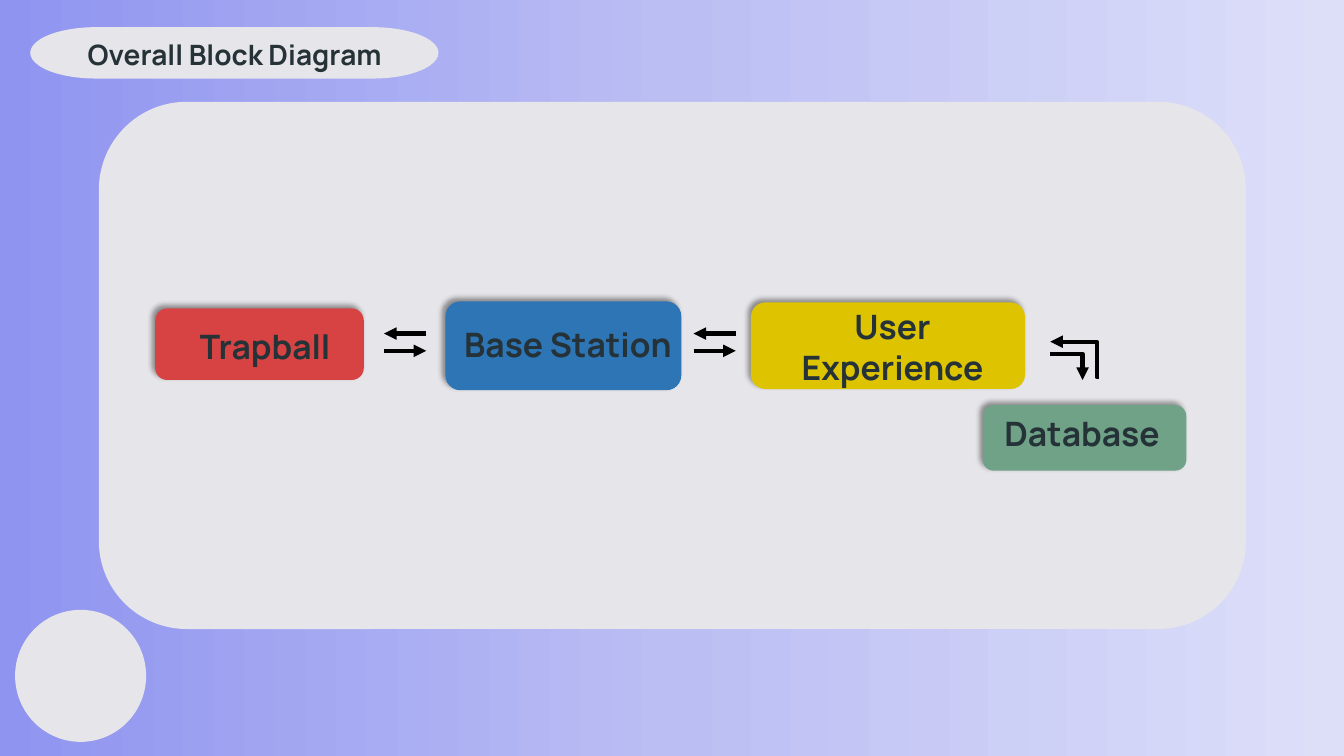
import copy
import pptx
import pptx.util
import pptx.dml.color
import pptx.enum.shapes
import pptx.enum.text
import pptx.oxml
import pptx.oxml.ns

Pt = pptx.util.Pt
RGB = pptx.dml.color.RGBColor
SHAPE = pptx.enum.shapes.MSO_SHAPE
CONNECTOR = pptx.enum.shapes.MSO_CONNECTOR
qn = pptx.oxml.ns.qn

PANEL = RGB(0xE6, 0xE6, 0xEA)
INK = RGB(0x25, 0x32, 0x37)
BLACK = RGB(0, 0, 0)
RED = RGB(0xD7, 0x43, 0x43)
GREEN = RGB(0x70, 0xA2, 0x88)
YELLOW = RGB(0xDE, 0xC4, 0x00)
BLUE = RGB(0x2E, 0x75, 0xB6)
BACKDROP = [(0, RGB(0x8F, 0x94, 0xF0)), (0.5, RGB(0xBB, 0xBE, 0xF3)), (1, RGB(0xDD, 0xDF, 0xF9))]

# Content: left, top, width, height in points
TITLE = ("Overall Block Diagram", (51.8, 23, 231.8, 31.7))
CARD = (70.6, 72.7, 819.4, 376.6)
PILL = (21.6, 19.4, 291.6, 36.7)
DISC = (10.8, 435.6, 93.6, 94.3)
BLOCKS = [  # label, colour, block box, label box
    ("Trapball", RED, (110.9, 220.3, 149, 51.1), (118.1, 229, 142.6, 36)),
    ("Database", GREEN, (702, 289.4, 145.4, 46.8), (698.4, 291.6, 149, 36)),
    ("User Experience", YELLOW, (536.4, 216, 195.8, 61.9), (545, 215.3, 185, 65.5)),
    ("Base Station", BLUE, (318.2, 215.3, 168.5, 63.4), (313.2, 227.5, 185, 36)),
]
EXCHANGE_LEFTS = [274.3, 495.4]
EXCHANGE_WIDTH, BACK_Y, FORTH_Y = 30.2, 238.3, 250.6
BENDS = [  # ends, bend position, rotation
    ((750.2, 252.7, 773.3, 271.4), 100000, 0),
    ((750.2, 244.1, 784.8, 269.3), 4400, 180),
]

deck = pptx.Presentation()
deck.slide_width, deck.slide_height = Pt(960), Pt(540)
slide = deck.slides.add_slide(deck.slide_layouts[5])


def add_panel(kind, box, color):
    panel = slide.shapes.add_shape(kind, *map(Pt, box))
    panel.shadow.inherit = False
    panel.fill.solid()
    panel.fill.fore_color.rgb = color
    panel.line.fill.background()
    return panel


def write_label(holder, text, size):
    frame = holder.text_frame
    frame.text = text
    frame_format = {
        "word_wrap": True,
        "auto_size": pptx.enum.text.MSO_AUTO_SIZE.NONE,
        "vertical_anchor": pptx.enum.text.MSO_ANCHOR.TOP,
        "margin_left": Pt(7.2), "margin_right": Pt(7.2),
        "margin_top": Pt(3.6), "margin_bottom": Pt(3.6),
    }
    line = frame.paragraphs[0]
    line_format = {"alignment": pptx.enum.text.PP_ALIGN.CENTER,
                   "line_spacing": 1.0, "space_before": Pt(0)}
    font_format = {"name": "Manrope", "size": Pt(size), "bold": True}
    for target, values in ((frame, frame_format), (line, line_format),
                           (line.runs[0].font, font_format)):
        for key, value in values.items():
            setattr(target, key, value)
    line.runs[0].font.color.rgb = INK


def cast_shadow(block):
    effects = block.element.spPr.find(qn("a:effectLst"))
    effects.append(pptx.oxml.parse_xml(
        f'<a:outerShdw {pptx.oxml.ns.nsdecls("a")} blurRad="{Pt(4)}" dist="{Pt(3)}" '
        'dir="13500000" algn="br" rotWithShape="0">'
        '<a:srgbClr val="000000"><a:alpha val="40000"/></a:srgbClr></a:outerShdw>'))


def add_arrow(kind, ends):
    arrow = slide.shapes.add_connector(kind, *map(Pt, ends))
    arrow.line.color.rgb = BLACK
    arrow.line.width = Pt(3)
    properties = arrow.element.spPr
    head = properties.find(qn("a:ln")).makeelement(qn("a:tailEnd"), {"type": "triangle"})
    properties.find(qn("a:ln")).append(head)
    properties.append(properties.makeelement(qn("a:effectLst"), {}))
    return arrow


# Gradient background
backdrop = slide.background.fill
backdrop.gradient()
backdrop.gradient_angle = 0
stop_list = slide.element.find(".//" + qn("a:gsLst"))
stop_list.insert(1, copy.deepcopy(stop_list[0]))
for stop, (position, color) in zip(backdrop.gradient_stops, BACKDROP):
    stop.position = position
    stop.color.rgb = color

# Card, title pill and corner disc
add_panel(SHAPE.ROUNDED_RECTANGLE, CARD, PANEL)
pill = add_panel(SHAPE.FLOWCHART_TERMINATOR, PILL, PANEL)
add_panel(SHAPE.OVAL, DISC, PANEL)

# Title, stacked above its pill
title_text, title_box = TITLE
title = slide.shapes.title
title.left, title.top, title.width, title.height = map(Pt, title_box)
write_label(title, title_text, 20)
pill.element.addnext(title.element)

# Blocks with their labels
for label, color, block_box, label_box in BLOCKS:
    cast_shadow(add_panel(SHAPE.ROUNDED_RECTANGLE, block_box, color))
    write_label(slide.shapes.add_textbox(*map(Pt, label_box)), label, 24)

# Two-way arrows between neighbouring blocks
for left in EXCHANGE_LEFTS:
    right = left + EXCHANGE_WIDTH
    add_arrow(CONNECTOR.STRAIGHT, (right, BACK_Y, left, BACK_Y))
    add_arrow(CONNECTOR.STRAIGHT, (left, FORTH_Y, right, FORTH_Y))

# Bent arrows to and from the database
for ends, bend, rotation in BENDS:
    properties = add_arrow(CONNECTOR.ELBOW, ends).element.spPr
    if rotation:
        properties.find(qn("a:xfrm")).set("rot", str(rotation * 60000))
    guides = properties.find(qn("a:prstGeom")).find(qn("a:avLst"))
    guides.append(guides.makeelement(qn("a:gd"), {"name": "adj1", "fmla": f"val {bend}"}))

deck.save("out.pptx")
